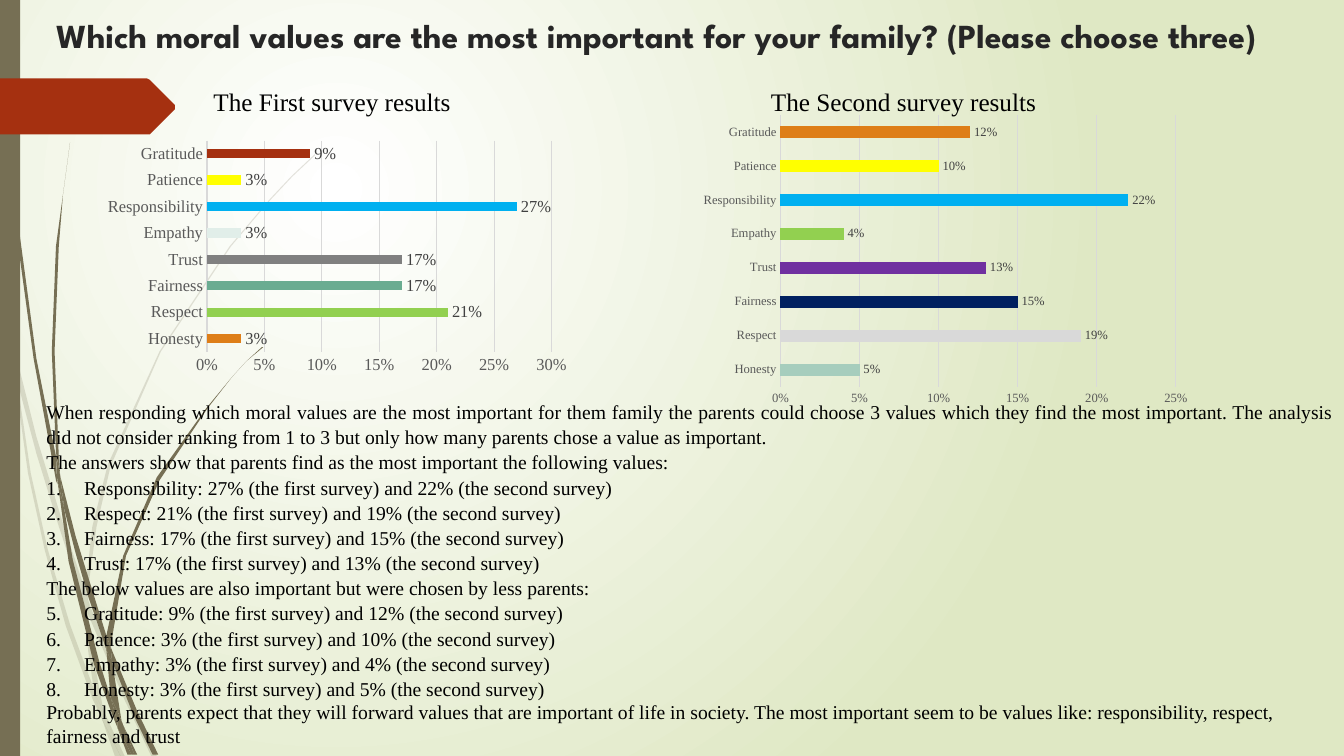
from lxml import etree
from pptx import Presentation
from pptx.chart.data import CategoryChartData
from pptx.dml.color import RGBColor
from pptx.enum.chart import XL_CHART_TYPE, XL_LABEL_POSITION, XL_TICK_MARK
from pptx.enum.shapes import MSO_SHAPE
from pptx.enum.text import MSO_ANCHOR, PP_ALIGN
from pptx.oxml import parse_xml
from pptx.oxml.ns import nsdecls, qn
from pptx.util import Pt

SERIF = "Times New Roman"
OLIVE = "766F54"

FAINT_STRANDS = [
    [(7.9, 252), (6.5, 231.8), (0, 203), (0, 215.3), (7.2, 247.7)],
    [(41.8, 375.8), (60.5, 431.3), (61.2, 421.9), (44.6, 374.4), (26, 311.9),
     (10.1, 248.4), (12.2, 270.7), (25.9, 323.6)],
    [(66.2, 437), (63.4, 429.1), (63.4, 439.2), (88.6, 499.7), (108, 540),
     (111.6, 540), (91.4, 498.2)],
    [(85.7, 540), (89.3, 540), (75.6, 511.9)],
    [(67, 491.8), (50.4, 445.7), (34.5, 392.2), (22.3, 337.7), (12.2, 270.7),
     (7.9, 252), (20.2, 338.4), (31.6, 393), (46.8, 447.1), (66.2, 499),
     (72.7, 514.1), (71.3, 509)],
    [(60.5, 431.3), (62.6, 465.1), (67, 491.8), (69.1, 498.2), (75.6, 511.9),
     (74.2, 508.3), (65.5, 465.1), (63.4, 439.2), (63.4, 437.8)],
    [(63.4, 420.5), (68.6, 375.8), (79.2, 332.6), (115.2, 251.3), (164.9, 176.4),
     (193, 142.6), (208.8, 126), (224.6, 110.9), (224.6, 110.2), (208.1, 126),
     (193, 141.8), (164.2, 175.7), (113.8, 250.6), (77, 331.9), (65.9, 375.8),
     (61.2, 420.5), (61.2, 421.9), (63.4, 429.1)],
    [(72.7, 514.1), (82.1, 540), (85.7, 540)],
    [(63.4, 437.8), (63.4, 439.2), (63.4, 429.1), (61.2, 421.9), (60.5, 431.3)],
    [(69.1, 498.2), (67, 491.8), (71.3, 509), (72.7, 514.1), (85.7, 540), (75.6, 511.9)],
]
SOLID_STRANDS = [
    [(5, 79.2), (12.2, 167.8), (23.8, 255.6), (40.3, 343.4), (41, 346.3),
     (39.6, 329), (39.6, 326.2), (25.9, 255.6), (13.7, 167), (5.8, 78.5),
     (3.6, 34.6), (2.9, 0), (2.2, 0), (2.9, 34.6)],
    [(63.4, 426.2), (76.3, 464.4), (76.3, 454.3), (67, 424.8), (54, 382.9),
     (43.2, 339.8), (46.1, 363.6), (54.2, 394.9)],
    [(81.4, 467.3), (79.2, 461.5), (79.9, 472.3), (95, 509.8), (109.4, 539.3),
     (113, 539.3), (97.9, 508.3)],
    [(79.2, 497.5), (70.6, 473), (51.8, 400.3), (46.1, 363.6), (41, 343.4),
     (49, 401), (67, 474.5), (79.9, 509.8), (84.2, 519.8), (83.5, 516.2)],
    [(43.2, 339.8), (41.8, 326.2), (38.9, 251.3), (41.8, 176.4), (45.4, 139),
     (50.4, 101.5), (44.6, 139), (40.3, 176.4), (37.4, 251.3), (39.6, 323.3)],
    [(95.8, 539.3), (97.9, 539.3), (87.8, 517.7)],
    [(41, 343.4), (46.1, 363.6), (43.2, 339.8), (39.6, 323.3), (39.6, 326.2)],
    [(79.9, 455.8), (90, 397.4), (113.8, 342.7), (147.6, 292.3), (166.3, 269.3),
     (176.4, 258.5), (187.9, 247.7), (187.2, 247.7), (176.4, 257.8), (166.3, 268.6),
     (146.9, 291.6), (112.3, 341.3), (87.8, 396.7), (76.3, 454.3), (79.2, 461.5)],
    [(84.2, 519.8), (91.4, 539.3), (94.3, 539.3)],
    [(76.3, 464.4), (79.2, 497.5), (83.5, 508.3), (87.8, 517.7), (87.1, 515.5),
     (79.9, 472.3), (78.5, 468.7)],
    [(76.3, 464.4), (78.5, 468.7), (79.9, 472.3), (79.2, 461.5), (76.3, 454.3)],
    [(83.5, 508.3), (79.2, 497.5), (83.5, 516.2), (84.2, 519.8), (93.6, 539.3),
     (95.8, 539.3), (87.8, 517.7)],
]
RED_ARROW = [(0, 56.2), (105.1, 56.2), (106.6, 56.9), (124.6, 74.9), (125.3, 76.3),
             (124.6, 77.8), (106.6, 95.8), (105.1, 96.5), (97.9, 96.5), (0, 95.8)]

# Value, first survey share and colour, second survey share and colour
SURVEY = [
    ("Honesty", 0.03, "DE7E18", 0.05, "A6CDBD"),
    ("Respect", 0.21, "92D050", 0.19, "D9D9D9"),
    ("Fairness", 0.17, "6AAC91", 0.15, "002060"),
    ("Trust", 0.17, "808080", 0.13, "7030A0"),
    ("Empathy", 0.03, "E1EEE9", 0.04, "92D050"),
    ("Responsibility", 0.27, "00B0F0", 0.22, "00B0F0"),
    ("Patience", 0.03, "FFFF00", 0.1, "FFFF00"),
    ("Gratitude", 0.09, "A53010", 0.12, "DE7E18"),
]
INTRO = ("When responding which moral values are the most important for them family the "
         "parents could choose 3 values which they find the most important. The analysis did "
         "not consider ranking from 1 to 3 but only how many parents chose a value as important.")
MOST = "The answers show that parents find as the most important the following values:"
LESS = "The below values are also important but were chosen by less parents:"
CLOSING = ("Probably, parents expect that they will forward values that are important of life "
           "in society. The most important seem to be values like: responsibility, respect, "
           "fairness and trust")


def rgb(color):
    return RGBColor.from_string(color)


def set_font(font, size, color, name=SERIF, bold=False):
    font.size, font.name, font.bold = Pt(size), name, bold
    font.color.rgb = rgb(color)


def paint_background(s):
    fill = s.background.fill
    fill.gradient()
    for stop, color in zip(fill.gradient_stops, ("FFFFFF", "DFE8C4")):
        stop.color.rgb = rgb(color)
    lin = next(s.background._cSld.iter(qn("a:lin")))
    lin.getparent().replace(lin, parse_xml(
        f'<a:path {nsdecls("a")} path="circle">'
        '<a:fillToRect l="50000" t="50000" r="100000" b="100000"/></a:path>'))


def fill_plain(sp, color, alpha=None):
    sp.shadow.inherit = False
    sp.fill.solid()
    sp.fill.fore_color.rgb = rgb(color)
    sp.line.fill.background()
    if alpha:
        clr = sp._element.spPr.find(qn("a:solidFill"))[0]
        etree.SubElement(clr, qn("a:alpha")).set("val", str(alpha * 1000))


def add_outline(s, points, color, alpha=None):
    builder = s.shapes.build_freeform(*points[0], scale=Pt(1))
    builder.add_line_segments(points[1:], close=True)
    fill_plain(builder.convert_to_shape(), color, alpha)


def add_text(s, x, y, w, h, lines, size, color="000000", name=SERIF, bold=False):
    """Add a wrapped text box and return its paragraphs."""
    tf = s.shapes.add_textbox(Pt(x), Pt(y), Pt(w), Pt(h)).text_frame
    tf.word_wrap = True
    tf.vertical_anchor = MSO_ANCHOR.TOP
    tf.text = "\n".join(lines)
    for p in tf.paragraphs:
        set_font(p.font, size, color, name, bold)
    return tf.paragraphs


def number_paragraph(p, start):
    pPr = p._p.get_or_add_pPr()
    pPr.set("marL", str(Pt(27)))
    pPr.set("indent", str(-Pt(27)))
    bullet = parse_xml(f'<a:buAutoNum {nsdecls("a")} type="arabicPeriod" startAt="{start}"/>')
    pPr.insert_element_before(bullet, "a:tabLst", "a:defRPr", "a:extLst")


def add_bar_chart(s, x, y, w, h, shares, colors, size, maximum):
    data = CategoryChartData(number_format="0%")
    data.categories = [row[0] for row in SURVEY]
    data.add_series("Series 1", shares)
    chart = s.shapes.add_chart(XL_CHART_TYPE.BAR_CLUSTERED, Pt(x), Pt(y), Pt(w), Pt(h), data).chart
    chart.has_legend = chart.has_title = False
    set_font(chart.font, size, "000000")
    for axis in (chart.category_axis, chart.value_axis):
        axis.major_tick_mark = axis.minor_tick_mark = XL_TICK_MARK.NONE
        set_font(axis.tick_labels.font, size, "595959")
    cat, val = chart.category_axis, chart.value_axis
    cat.has_major_gridlines = False
    val.minimum_scale, val.maximum_scale, val.major_unit = 0, maximum, 0.05
    val.tick_labels.number_format, val.tick_labels.number_format_is_linked = "0%", False
    val.format.line.fill.background()
    for line in (cat.format.line, val.major_gridlines.format.line):
        line.color.rgb, line.width = rgb("D9D9D9"), Pt(0.75)
    plot = chart.plots[0]
    plot.gap_width, plot.vary_by_categories, plot.has_data_labels = 182, False, True
    labels = plot.data_labels
    labels.show_value, labels.position = True, XL_LABEL_POSITION.OUTSIDE_END
    labels.number_format, labels.number_format_is_linked = "0%", False
    set_font(labels.font, size, "404040")
    for i, color in enumerate(colors):
        fill = plot.series[0].points[i].format.fill
        fill.solid()
        fill.fore_color.rgb = rgb(color)
    return chart


def place_plot(chart, x, y, w, h):
    """Fix the inner plot area, in fractions of the chart."""
    area = chart._chartSpace.chart.plotArea
    for old in area.findall(qn("c:layout")):
        area.remove(old)
    fields = [("layoutTarget", "inner"), ("xMode", "edge"), ("yMode", "edge"),
              ("x", x), ("y", y), ("w", w), ("h", h)]
    inner = "".join(f'<c:{tag} val="{value}"/>' for tag, value in fields)
    area.insert(0, parse_xml(f'<c:layout {nsdecls("c")}><c:manualLayout>{inner}'
                             '</c:manualLayout></c:layout>'))


def add_findings(s):
    shares = {row[0]: (row[1], row[3]) for row in SURVEY}
    ranked = ["Responsibility", "Respect", "Fairness", "Trust",
              "Gratitude", "Patience", "Empathy", "Honesty"]
    items = [f"{v}: {shares[v][0]:.0%} (the first survey) and {shares[v][1]:.0%} (the second survey)"
             for v in ranked]
    lines = [INTRO, MOST, *items[:4], LESS, *items[4:], CLOSING]
    paragraphs = add_text(s, 26, 281, 934, 259, lines, 14)
    for p in paragraphs[:-1]:
        p.alignment, p.line_spacing = PP_ALIGN.JUSTIFY, 1.07
    for start, group in ((1, paragraphs[2:6]), (5, paragraphs[7:11])):
        for p in group:
            number_paragraph(p, start)


def main():
    prs = Presentation()
    prs.slide_width, prs.slide_height = Pt(960), Pt(540)
    s = prs.slides.add_slide(prs.slide_layouts[6])
    paint_background(s)
    for points in FAINT_STRANDS:
        add_outline(s, points, OLIVE, 20)
    for points in SOLID_STRANDS:
        add_outline(s, points, OLIVE)
    fill_plain(s.shapes.add_shape(MSO_SHAPE.RECTANGLE, 0, 0, Pt(14.4), Pt(540)), OLIVE)
    add_outline(s, RED_ARROW, "A53010")
    title = "Which moral values are the most important for your family? (Please choose three)"
    add_text(s, 26, 7.2, 885.6, 101.5, [title], 24, "262626",
             "League Spartan", True)[0].alignment = PP_ALIGN.CENTER
    _, first, first_colors, second, second_colors = zip(*SURVEY)
    chart = add_bar_chart(s, 77, 100, 330, 172, first, first_colors, 12, 0.3)
    place_plot(chart, 0.2, 0, 0.76, 0.88)
    add_findings(s)
    add_text(s, 145.4, 58.3, 250.6, 28.8, ["The First survey results"], 18)
    add_text(s, 543.6, 58.3, 262, 28.8, ["The Second survey results"], 18)
    add_bar_chart(s, 495.4, 77.8, 360, 216, second, second_colors, 9, 0.25)
    prs.save("out.pptx")


if __name__ == "__main__":
    main()
